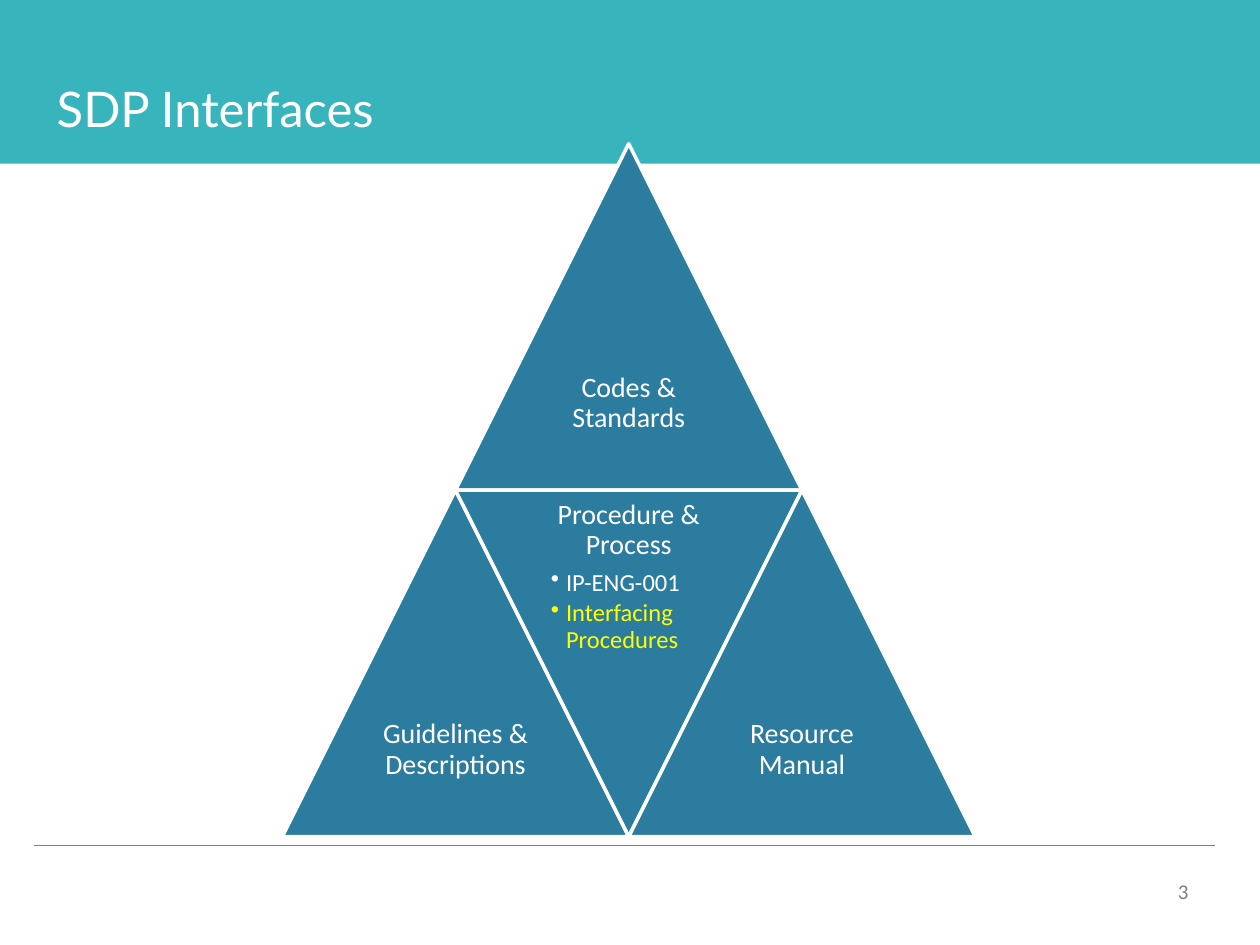
from dataclasses import dataclass

from lxml import etree
from pptx import Presentation
from pptx.dml.color import RGBColor
from pptx.enum.shapes import MSO_CONNECTOR, MSO_SHAPE
from pptx.enum.text import MSO_ANCHOR, PP_ALIGN
from pptx.oxml.ns import qn
from pptx.util import Inches, Pt

RECTANGLE = MSO_SHAPE.RECTANGLE
TRIANGLE = MSO_SHAPE.ISOSCELES_TRIANGLE
STRAIGHT = MSO_CONNECTOR.STRAIGHT
TOP, MIDDLE = MSO_ANCHOR.TOP, MSO_ANCHOR.MIDDLE
LEFT, CENTER = PP_ALIGN.LEFT, PP_ALIGN.CENTER


@dataclass(frozen=True)
class Theme:
    teal: RGBColor = RGBColor.from_string("38B4BC")
    blue: RGBColor = RGBColor.from_string("2C7C9F")
    white: RGBColor = RGBColor.from_string("FFFFFF")
    yellow: RGBColor = RGBColor.from_string("FFFF00")
    gray: RGBColor = RGBColor.from_string("808080")
    title_font: str = "Lato"
    body_font: str = "Calibri"
    title_size: int = 28
    label_size: int = 16
    bullet_size: int = 14
    number_size: int = 12


theme = Theme()


def add_text(paragraph, text, font_name, size, color):
    run = paragraph.add_run()
    run.text = text
    run.font.name = font_name
    run.font.size = Pt(size)
    run.font.color.rgb = color


def set_frame(frame, margin, anchor):
    frame.word_wrap = True
    frame.vertical_anchor = anchor
    frame.margin_left = frame.margin_right = Inches(margin)
    frame.margin_top = frame.margin_bottom = Inches(margin)


presentation = Presentation()
presentation.slide_width = Inches(10)
presentation.slide_height = Inches(7.5)
slide = presentation.slides.add_slide(presentation.slide_layouts[5])
shapes = slide.shapes

title = shapes.title
title.left, title.top = Inches(0.45), Inches(0.62)
title.width, title.height = Inches(8.91), Inches(0.36)
set_frame(title.text_frame, 0, TOP)
title_paragraph = title.text_frame.paragraphs[0]
title_paragraph.alignment = LEFT
add_text(title_paragraph, "SDP Interfaces", theme.title_font, theme.title_size, theme.white)

band = shapes.add_shape(RECTANGLE, 0, 0, Inches(10), Inches(1.3))
band.shadow.inherit = False
band.fill.solid()
band.fill.fore_color.rgb = theme.teal
band.line.fill.background()
title.element.addprevious(band.element)

footer_line = shapes.add_connector(STRAIGHT, Inches(0.27), Inches(6.71), Inches(9.64), Inches(6.71))
footer_line.line.color.rgb = theme.gray
footer_line.line.width = Pt(0.25)
etree.SubElement(footer_line.element.spPr, qn("a:effectLst"))

number_box = shapes.add_textbox(Inches(9.25), Inches(6.92), Inches(0.69), Inches(0.3))
number_box.text_frame.word_wrap = True
add_text(number_box.text_frame.paragraphs[0], "3", theme.body_font, theme.number_size, theme.gray)

side = 2.75
pyramid_left, pyramid_top = 2.24, 1.14
procedures = [("IP-ENG-001", theme.white), ("Interfacing Procedures", theme.yellow)]
triangles = [
    ("Codes & Standards", 1, 0, False, []),
    ("Guidelines & Descriptions", 0, 1, False, []),
    ("Procedure & Process", 1, 1, True, procedures),
    ("Resource Manual", 2, 1, False, []),
]

for label, half_steps, row, inverted, bullets in triangles:
    left = pyramid_left + half_steps * side / 2
    top = pyramid_top + row * side
    triangle = shapes.add_shape(TRIANGLE, Inches(left), Inches(top), Inches(side), Inches(side))
    triangle.shadow.inherit = False
    triangle.rotation = 180 if inverted else 0
    triangle.fill.solid()
    triangle.fill.fore_color.rgb = theme.blue
    triangle.line.color.rgb = theme.white
    triangle.line.width = Pt(2)

    label_top = top if inverted else top + side / 2
    label_box = shapes.add_textbox(
        Inches(left + side / 4), Inches(label_top), Inches(side / 2), Inches(side / 2)
    )
    frame = label_box.text_frame
    set_frame(frame, 0.07, MIDDLE)
    paragraph = frame.paragraphs[0]
    paragraph.alignment = CENTER
    paragraph.line_spacing = 0.9
    paragraph.space_after = Pt(5.6)
    add_text(paragraph, label, theme.body_font, theme.label_size, theme.white)

    for text, color in bullets:
        paragraph = frame.add_paragraph()
        paragraph.level = 1
        paragraph.alignment = LEFT
        paragraph.line_spacing = 0.9
        paragraph.space_after = Pt(2.1)
        properties = paragraph._p.get_or_add_pPr()
        properties.set("marL", str(Inches(0.12)))
        properties.set("indent", str(-Inches(0.12)))
        etree.SubElement(properties, qn("a:buChar"), char="•")
        add_text(paragraph, text, theme.body_font, theme.bullet_size, color)

presentation.save("out.pptx")
